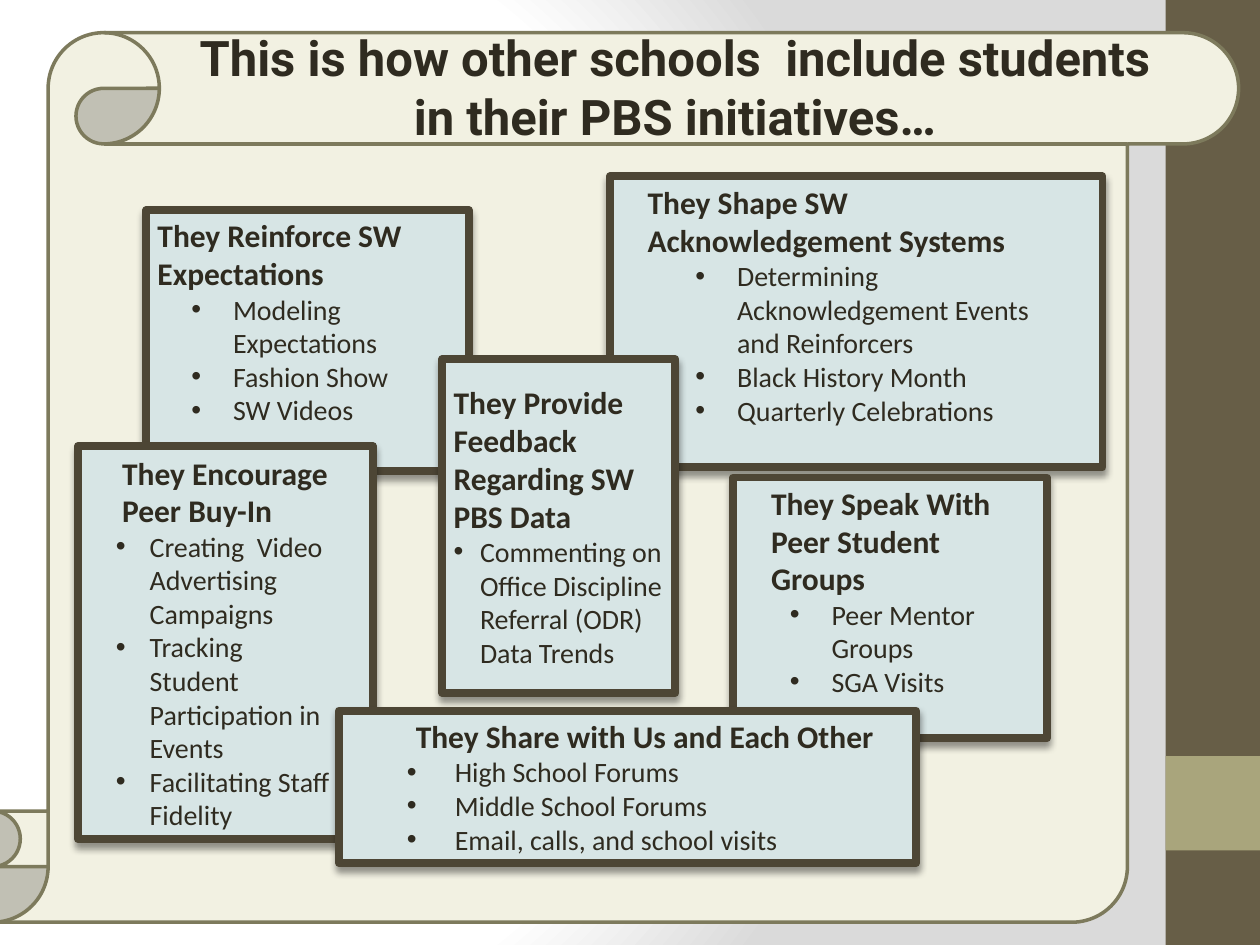
from lxml.etree import SubElement
from pptx import Presentation
from pptx.dml.color import RGBColor
from pptx.enum.shapes import MSO_SHAPE
from pptx.enum.text import MSO_ANCHOR, MSO_AUTO_SIZE, PP_ALIGN
from pptx.oxml import parse_xml
from pptx.oxml.ns import nsdecls, qn
from pptx.util import Pt

INK = "2F2B20"
TITLE_LINES = ["This is how other schools  include students ",
               "in their PBS initiatives…"]

# place: left, top, width, height; side and bottom: insets;
# heading: heading indent; bullet: bullet text indent and hanging indent
BOXES = [
    dict(place=(83.5, 120.2, 184.3, 149), side=6.5, bottom=25,
         heading=0, bullet=(43.2, -23.8),
         title="They Reinforce SW Expectations",
         items=["Modeling Expectations", "Fashion Show", "SW Videos"]),
    dict(place=(348.5, 100.8, 281.5, 166.3), side=21.6, bottom=22.5,
         heading=0, bullet=(51.1, -23.8),
         title="They Shape SW Acknowledgement Systems",
         items=["Determining Acknowledgement Events and Reinforcers",
                "Black History Month", "Quarterly Celebrations"]),
    dict(place=(44.6, 254.9, 168.5, 224.6), side=21.6, bottom=3,
         heading=3.6, bullet=(19.4, -23.8),
         title="They Encourage Peer Buy-In",
         items=["Creating  Video Advertising Campaigns",
                "Tracking Student Participation in Events",
                "Facilitating Staff Fidelity"]),
    dict(place=(252.7, 205.2, 133.2, 190.8), side=6.5, bottom=3,
         heading=0, bullet=(15.1, -23.8),
         title="They Provide Feedback Regarding SW PBS Data",
         items=["Commenting on Office Discipline Referral (ODR) Data Trends"]),
    dict(place=(419, 272.9, 179.3, 149), side=21.6, bottom=22.5,
         heading=0, bullet=(34.6, -23.8),
         title="They Speak With Peer Student Groups",
         items=["Peer Mentor Groups", "SGA Visits"]),
    dict(place=(193.7, 406.1, 329.8, 87.1), side=21.6, bottom=3.6,
         heading=22.3, bullet=(44.6, -27.4),
         title="They Share with Us and Each Other",
         items=["High School Forums", "Middle School Forums",
                "Email, calls, and school visits"]),
]


def color(value):
    return RGBColor.from_string(value)


def set_background(slide):
    stops = "".join(
        f'<a:gs pos="{position}"><a:srgbClr val="{value}"/></a:gs>'
        for position, value in [(0, "FFFFFF"), (75000, "FFFFFF"), (100000, "DADADA")])
    background = parse_xml(
        f'<p:bg {nsdecls("p", "a")}><p:bgPr><a:gradFill rotWithShape="1">'
        f'<a:gsLst>{stops}</a:gsLst><a:path path="circle">'
        '<a:fillToRect l="20000" t="50000" r="100000" b="50000"/></a:path>'
        '</a:gradFill><a:effectLst/></p:bgPr></p:bg>')
    slide._element.cSld.insert(0, background)


def add_panel(slide, kind, place, fill, line=None, line_width=0):
    shape = slide.shapes.add_shape(kind, *[Pt(length) for length in place])
    shape.shadow.inherit = False
    shape.fill.solid()
    shape.fill.fore_color.rgb = color(fill)
    if line:
        shape.line.color.rgb = color(line)
        shape.line.width = Pt(line_width)
    else:
        shape.line.fill.background()
    return shape


def add_shadow(shape):
    effects = shape._element.spPr.find(qn("a:effectLst"))
    shadow = SubElement(effects, qn("a:outerShdw"), blurRad=str(Pt(4)),
                        dist=str(Pt(3)), dir="5400000", rotWithShape="0")
    black = SubElement(shadow, qn("a:srgbClr"), val="000000")
    SubElement(black, qn("a:alpha"), val="40000")


def format_paragraph(paragraph, font_name, size, bold, alignment):
    paragraph.alignment = alignment
    for run in paragraph.runs:
        run.font.name = font_name
        run.font.size = Pt(size)
        run.font.bold = bold
        run.font.color.rgb = color(INK)


def set_indent(paragraph, left, first=0, bullet=False):
    properties = paragraph._p.get_or_add_pPr()
    properties.set("marL", str(Pt(left)))
    properties.set("indent", str(Pt(first)))
    if bullet:
        SubElement(properties, qn("a:buFont"), typeface="Arial")
        SubElement(properties, qn("a:buChar"), char="•")


def add_title(slide):
    title = slide.shapes.title
    title.left, title.top = Pt(103.7), Pt(12.2)
    title.width, title.height = Pt(563.8), Pt(74.9)
    text_frame = title.text_frame
    text_frame.text = "\n".join(TITLE_LINES)
    text_frame.vertical_anchor = MSO_ANCHOR.TOP
    text_frame.auto_size = MSO_AUTO_SIZE.NONE
    for paragraph in text_frame.paragraphs:
        format_paragraph(paragraph, "Roboto", 28, True, PP_ALIGN.CENTER)
    # Bring the title in front of the scroll
    slide.shapes._spTree.append(title._element)


def add_idea_box(slide, box):
    shape = add_panel(slide, MSO_SHAPE.RECTANGLE, box["place"],
                      "D7E5E5", "4D4635", 4.5)
    add_shadow(shape)
    text_frame = shape.text_frame
    text_frame.word_wrap = True
    text_frame.vertical_anchor = MSO_ANCHOR.MIDDLE
    text_frame.margin_left = text_frame.margin_right = Pt(box["side"])
    text_frame.margin_top = Pt(3)
    text_frame.margin_bottom = Pt(box["bottom"])
    text_frame.text = "\n".join([box["title"], *box["items"]])
    heading, *items = text_frame.paragraphs
    format_paragraph(heading, "Calibri", 18, True, PP_ALIGN.LEFT)
    set_indent(heading, box["heading"])
    for paragraph in items:
        format_paragraph(paragraph, "Calibri", 16, False, PP_ALIGN.LEFT)
        set_indent(paragraph, *box["bullet"], bullet=True)


def main():
    presentation = Presentation()
    presentation.slide_width, presentation.slide_height = Pt(720), Pt(540)
    slide = presentation.slides.add_slide(presentation.slide_layouts[5])
    set_background(slide)

    # Side band with its accent, then the scroll
    add_panel(slide, MSO_SHAPE.RECTANGLE, (666, 0, 54, 540), "675E47")
    add_panel(slide, MSO_SHAPE.RECTANGLE, (666, 432, 54, 54), "A9A57C")
    add_panel(slide, MSO_SHAPE.VERTICAL_SCROLL, (-36, 18.7, 743.8, 508.3),
              "F2F1E2", "7D7A5C", 2)

    # Title and overlapping idea boxes, back to front
    add_title(slide)
    for box in BOXES:
        add_idea_box(slide, box)
    presentation.save("out.pptx")


if __name__ == "__main__":
    main()
